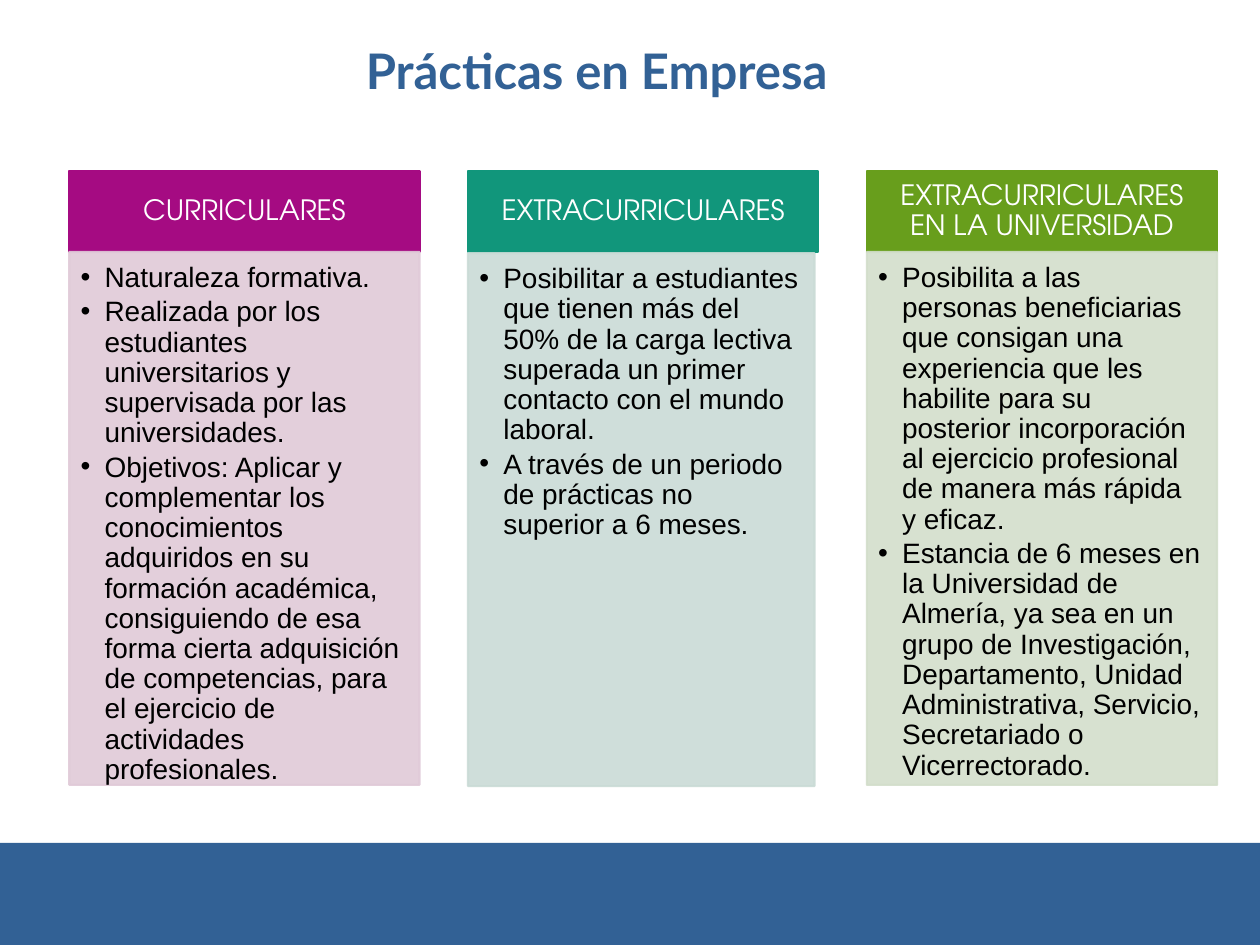
from lxml import etree
from pptx import Presentation
from pptx import util as u
from pptx.dml import color
from pptx.enum import shapes, text
from pptx.oxml import ns

HUES = {
    "blue": "326195", "white": "FFFFFF", "black": "000000",
    "plum": "A50B82", "pink": "E0CAD8",
    "teal": "11967B", "mint": "CADBD6",
    "green": "689E1C", "sage": "D3DECB",
}


def block(box, hue, pads=None, alpha=100):
    """Add a filled rectangle; alpha is its opacity in percent."""
    rect = slide.shapes.add_shape(
        shapes.MSO_SHAPE.RECTANGLE, *[u.Inches(n) for n in box])
    rect.shadow.inherit = False
    rect.line.width = u.Pt(1.25)
    rect.line.fill.solid()
    rect.fill.solid()
    for fill in (rect.fill, rect.line.fill):
        fill.fore_color.rgb = color.RGBColor.from_string(HUES[hue])
    if alpha < 100:
        for tone in rect._element.spPr.iter(ns.qn("a:srgbClr")):
            etree.SubElement(tone, ns.qn("a:alpha"), val=str(alpha * 1000))
    if pads:
        frame = rect.text_frame
        frame.word_wrap = True
        (frame.margin_left, frame.margin_top,
         frame.margin_right, frame.margin_bottom) = [u.Inches(n) for n in pads]
    return rect


def style(para, font, size, hue, align, bold=False):
    para.alignment = align
    para.line_spacing = 0.9
    for run in para.runs:
        run.font.name = font
        run.font.size = u.Pt(size)
        run.font.bold = bold
        run.font.color.rgb = color.RGBColor.from_string(HUES[hue])


deck = Presentation()
deck.slide_width, deck.slide_height = u.Inches(10), u.Inches(7.5)
slide = deck.slides.add_slide(deck.slide_layouts[6])
left, mid = text.PP_ALIGN.LEFT, text.PP_ALIGN.CENTER

# Footer band
band = block((0, 6.69, 10, 0.81), "blue")
band.line.fill.background()

# Title
title = slide.shapes.add_textbox(
    u.Inches(1.28), u.Inches(0.32), u.Inches(6.91), u.Inches(0.52))
frame = title.text_frame
frame.word_wrap = True
frame.vertical_anchor = text.MSO_ANCHOR.BOTTOM
frame.text = "Prácticas en Empresa"
style(frame.paragraphs[0], "Lato", 28, "blue", mid, bold=True)

# Columns: heading, heading hue, body hue, body top, body width, points
cols = [
    ("CURRICULARES", "plum", "pink", 2, 2.78, [
        "Naturaleza formativa.",
        "Realizada por los estudiantes universitarios y supervisada por las "
        "universidades.",
        "Objetivos: Aplicar y complementar los conocimientos adquiridos en su "
        "formación académica, consiguiendo de esa forma cierta adquisición de "
        "competencias, para el ejercicio de actividades profesionales.",
    ]),
    ("EXTRACURRICULARES", "teal", "mint", 2.01, 2.75, [
        "Posibilitar a estudiantes que tienen más del 50% de la carga lectiva "
        "superada un primer contacto con el mundo laboral.",
        "A través de un periodo de prácticas no superior a 6 meses.",
    ]),
    ("EXTRACURRICULARES EN LA UNIVERSIDAD", "green", "sage", 2, 2.78, [
        "Posibilita a las personas beneficiarias que consigan una experiencia "
        "que les habilite para su posterior incorporación al ejercicio "
        "profesional de manera más rápida y eficaz.",
        "Estancia de 6 meses en la Universidad de Almería, ya sea en un grupo "
        "de Investigación, Departamento, Unidad Administrativa, Servicio, "
        "Secretariado o Vicerrectorado.",
    ]),
]
for i, (name, dark, pale, top, wide, points) in enumerate(cols):
    x = 0.55 + i * 3.165

    # Heading
    head = block((x, 1.36, 2.78, 0.64), dark, (0.12, 0.07, 0.12, 0.07))
    head.text_frame.vertical_anchor = text.MSO_ANCHOR.MIDDLE
    head.text_frame.text = name
    style(head.text_frame.paragraphs[0], "TeX Gyre Adventor", 16, "white", mid)

    # Bulleted body
    body = block((x, top, wide, 4.23), pale, (0.09, 0.09, 0.12, 0.14), 90)
    body.text_frame.vertical_anchor = text.MSO_ANCHOR.TOP
    body.text_frame.text = "\n".join(points)
    for j, para in enumerate(body.text_frame.paragraphs):
        style(para, "Arial", 16, "black", left)
        if j:
            para.space_before = u.Pt(2.4)
        props = para._p.get_or_add_pPr()
        props.set("marL", str(u.Inches(0.19)))
        props.set("indent", str(-u.Inches(0.19)))
        tint = etree.SubElement(props, ns.qn("a:buClr"))
        etree.SubElement(tint, ns.qn("a:srgbClr"), val=HUES["black"])
        etree.SubElement(props, ns.qn("a:buFont"), typeface="Arial")
        etree.SubElement(props, ns.qn("a:buChar"), char="•")

deck.save("out.pptx")
